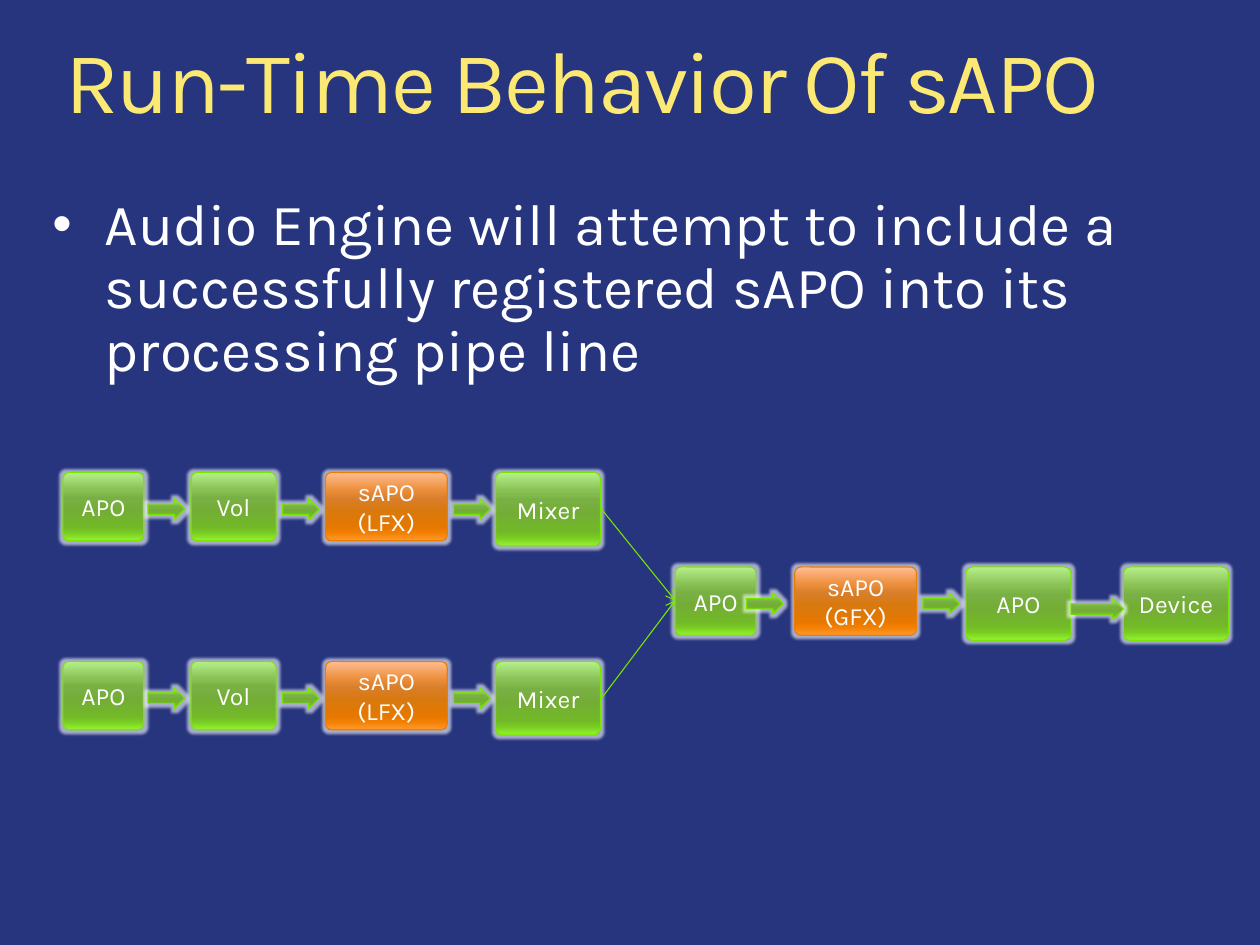
"""Build the slide on the run-time behavior of sAPO."""
from pptx import Presentation
from pptx.dml.color import RGBColor
from pptx.enum.shapes import MSO_CONNECTOR as Link, MSO_SHAPE as Kind
from pptx.enum.text import MSO_ANCHOR as Anchor, PP_ALIGN as Align
from pptx.oxml.ns import qn
from pptx.util import Pt
from lxml.etree import SubElement as Sub

NAVY = RGBColor(0x26, 0x35, 0x7E)
GOLD = RGBColor(0xFC, 0xE9, 0x74)
WHITE = RGBColor(0xFF, 0xFF, 0xFF)
LIME = RGBColor(0x77, 0xE7, 0x00)
RUST = RGBColor(0xED, 0x7C, 0x00)
STOPS = (0, 25, 38, 55, 80, 88, 100)
GREEN = [RGBColor.from_string(c) for c in (
    "B6EF8B", "8AC155", "79B044", "73AD35", "72B828", "78CA22", "94F32F")]
AMBER = [RGBColor.from_string(c) for c in (
    "FFBC93", "EC903D", "D97E2B", "D8790F", "E67800", "F27F00", "FF9A2E")]


class Deck:
    font = "Karla"
    pad = (8.64, 4.32)

    def __init__(self, wide, high):
        self.prs = Presentation()
        self.prs.slide_width, self.prs.slide_height = Pt(wide), Pt(high)
        self.slide = self.prs.slides.add_slide(self.prs.slide_layouts[6])
        back = self.slide.background.fill
        back.solid()
        back.fore_color.rgb = NAVY
        self.shapes = self.slide.shapes

    def frame(self, shape, pad):
        frame = shape.text_frame
        frame.word_wrap = True
        frame.margin_left = frame.margin_right = Pt(pad[0])
        frame.margin_top = frame.margin_bottom = Pt(pad[1])
        return frame

    def run(self, para, text, size, color):
        run = para.add_run()
        run.text = text
        run.font.name, run.font.size = self.font, Pt(size)
        run.font.color.rgb = color
        return run

    def text(self, place, text, size, color, pad):
        box = self.shapes.add_textbox(*map(Pt, place))
        para = self.frame(box, pad).paragraphs[0]
        para.line_spacing = 0.9
        return para, self.run(para, text, size, color)

    def title(self, place, text):
        run = self.text(place, text, 60, GOLD, self.pad)[1]
        run.font.bold = False
        run.font._element.set("spc", "-150")

    def bullet(self, place, text):
        props = self.text(place, text, 40, WHITE, (0, 0))[0]._p.get_or_add_pPr()
        props.set("marL", str(Pt(36)))
        props.set("indent", str(Pt(-36)))
        Sub(Sub(props, qn("a:buClr")), qn("a:srgbClr"), val=str(WHITE))
        Sub(props, qn("a:buSzPct"), val="95000")
        Sub(props, qn("a:buFont"), typeface="Arial")
        Sub(props, qn("a:buChar"), char="•")

    def glossy(self, kind, place, tones, edge):
        shape = self.shapes.add_shape(kind, *map(Pt, place))
        shape.fill.gradient()
        shape.fill.gradient_angle = 270
        props = shape._element.spPr
        stops = props.find(qn("a:gradFill")).find(qn("a:gsLst"))
        for old in list(stops):
            stops.remove(old)
        for pos, tone in zip(STOPS, tones):
            stop = Sub(stops, qn("a:gs"), pos=str(pos * 1000))
            Sub(stop, qn("a:srgbClr"), val=str(tone))
        shape.line.color.rgb, shape.line.width = edge, Pt(0.75)
        shape.shadow.inherit = False
        glow = Sub(props.find(qn("a:effectLst")), qn("a:glow"), rad=str(Pt(4)))
        tint = Sub(glow, qn("a:srgbClr"), val=str(WHITE))
        Sub(tint, qn("a:alpha"), val="60000")
        return shape

    def block(self, place, label):
        look = (AMBER, RUST) if label.startswith("sAPO") else (GREEN, LIME)
        shape = self.glossy(Kind.ROUNDED_RECTANGLE, place, *look)
        shape.adjustments[0] = 0.09
        frame = self.frame(shape, self.pad)
        frame.vertical_anchor = Anchor.MIDDLE
        para = frame.paragraphs[0]
        para.alignment = Align.CENTER
        self.run(para, label, 17, WHITE)

    def arrow(self, left, top, wide=25.2):
        self.glossy(Kind.RIGHT_ARROW, (left, top, wide, 14.4), GREEN, LIME)

    def chain(self, top, blocks, arrows):
        for label, left, wide, high in blocks:
            self.block((left, top, wide, high), label)
        for left in arrows:
            self.arrow(left, top + 18)

    def link(self, start, end):
        line = self.shapes.add_connector(Link.STRAIGHT, *map(Pt, start + end))
        line.line.color.rgb, line.line.width = LIME, Pt(0.75)
        Sub(line.line._get_or_add_ln(), qn("a:tailEnd"), type="arrow")
        Sub(line._element.spPr, qn("a:effectLst"))


def main():
    deck = Deck(864, 648)
    deck.title((36, 21.6, 792, 65.5), "Run-Time Behavior Of sAPO")
    deck.bullet((36, 133.9, 792, 131), "Audio Engine will attempt to include a "
                "successfully registered sAPO into its processing pipe line")
    local = [("APO", 43.2, 55.4, 46.8), ("Vol", 131, 58.3, 46.8),
             ("sAPO (LFX)", 223.2, 83.5, 46.8), ("Mixer", 339.8, 72, 50.4)]
    shared = [("APO", 463, 55.4, 46.8), ("sAPO (GFX)", 545, 83.5, 46.8),
              ("APO", 662.4, 72, 50.4), ("Device", 770.4, 72, 50.4)]
    tops = (324, 453.6)
    for top in tops:
        deck.chain(top, local, (101.5, 193.7, 311))
    deck.chain(388.8, shared, (511.9, 632.9))
    for top in tops:
        deck.link((412.5, top + 25.2), (463, 411.8))
    deck.arrow(734.4, 410.4, 36)
    deck.prs.save("out.pptx")


if __name__ == "__main__":
    main()
